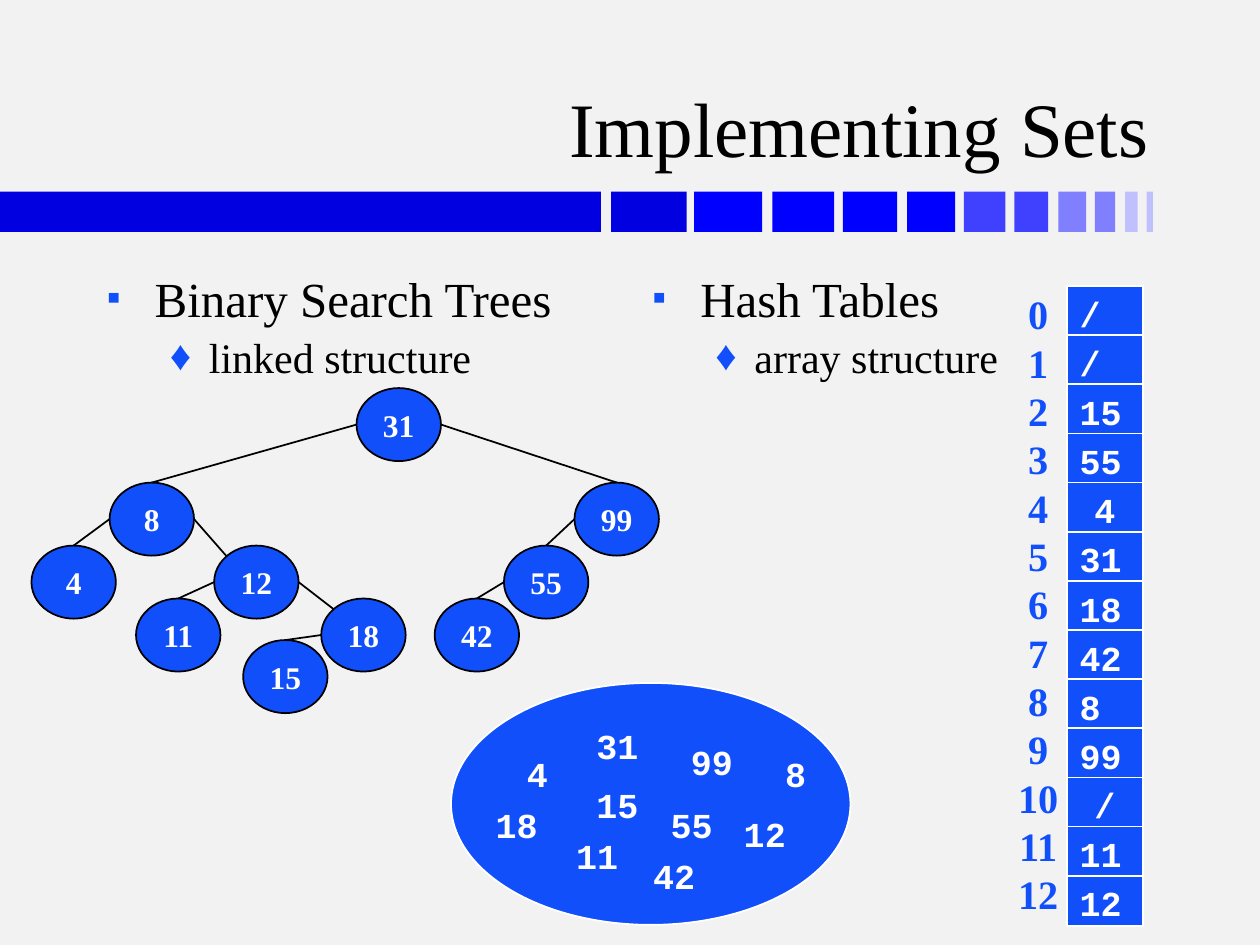
from lxml.etree import SubElement
from pptx import Presentation
from pptx.dml.color import RGBColor
from pptx.enum.shapes import MSO_CONNECTOR, MSO_SHAPE
from pptx.enum.text import MSO_ANCHOR, MSO_AUTO_SIZE, PP_ALIGN
from pptx.oxml.ns import qn
from pptx.util import Inches, Pt

BACKGROUND = RGBColor(0xF2, 0xF2, 0xF2)
BLACK = RGBColor(0, 0, 0)
WHITE = RGBColor(0xFF, 0xFF, 0xFF)
BLUE = RGBColor(0x11, 0x4F, 0xFB)
NAVY = RGBColor(0, 0, 0xE0)
PURE_BLUE = RGBColor(0, 0, 0xFF)
MID_BLUE = RGBColor(0x40, 0x40, 0xFF)
SOFT_BLUE = RGBColor(0x80, 0x80, 0xFF)
PALE_BLUE = RGBColor(0xC0, 0xC0, 0xFF)

HEADING = {"name": "Times New Roman", "size": Pt(44)}
TOPIC = {"name": "Times New Roman", "size": Pt(28)}
DETAIL = {"name": "Times New Roman", "size": Pt(24)}
NODE = {"name": "Times New Roman", "size": Pt(18), "bold": True}
INDEX = {"name": "Times New Roman", "size": Pt(23), "bold": True}
VALUE = {"name": "Courier New", "size": Pt(20), "bold": True}


def write(paragraph, text, formats, color, align):
    paragraph.text = text
    paragraph.alignment = align
    for name, value in formats.items():
        setattr(paragraph.font, name, value)
    paragraph.font.color.rgb = color


def draw(kind, left, top, width, height, fill, outline=None):
    shape = slide.shapes.add_shape(
        kind, Inches(left), Inches(top), Inches(width), Inches(height))
    shape.shadow.inherit = False
    shape.fill.solid()
    shape.fill.fore_color.rgb = fill
    if outline is None:
        shape.line.fill.background()
    else:
        shape.line.color.rgb = outline
        shape.line.width = Pt(1)
    return shape


prs = Presentation()
prs.slide_width, prs.slide_height = Inches(10), Inches(7.5)
slide = prs.slides.add_slide(prs.slide_layouts[6])
slide.background.fill.solid()
slide.background.fill.fore_color.rgb = BACKGROUND

# Fading band under the title
band = [
    (0, 4.77, NAVY), (4.85, 0.6, NAVY),
    (5.51, 0.54, PURE_BLUE), (6.13, 0.49, PURE_BLUE),
    (6.69, 0.43, PURE_BLUE), (7.2, 0.38, PURE_BLUE),
    (7.65, 0.33, MID_BLUE), (8.05, 0.27, MID_BLUE),
    (8.4, 0.22, SOFT_BLUE), (8.69, 0.16, SOFT_BLUE),
    (8.93, 0.1, PALE_BLUE), (9.1, 0.05, PALE_BLUE),
]
for left, width, color in band:
    draw(MSO_SHAPE.RECTANGLE, left, 1.52, width, 0.32, color)

# Title
title = slide.shapes.add_textbox(
    Inches(0.74), Inches(0.19), Inches(8.48), Inches(1.23)).text_frame
title.word_wrap = True
title.vertical_anchor = MSO_ANCHOR.BOTTOM
write(title.paragraphs[0], "Implementing Sets", HEADING, BLACK, PP_ALIGN.RIGHT)

# Two bulleted columns
for left, topic, detail in [
    (0.75, "Binary Search Trees", "linked structure"),
    (5.08, "Hash Tables", "array structure"),
]:
    column = slide.shapes.add_textbox(
        Inches(left), Inches(2.08), Inches(4.17), Inches(4.58)).text_frame
    column.word_wrap = True
    column.add_paragraph().space_before = Pt(2.5)
    rows = [
        (topic, TOPIC, "▪", 80, 0.38, 0.38, 0),
        (detail, DETAIL, "♦", 100, 0.81, 0.31, 1),
    ]
    for paragraph, row in zip(column.paragraphs, rows):
        text, formats, mark, percent, margin, hang, level = row
        paragraph.level = level
        properties = paragraph._p.get_or_add_pPr()
        properties.set("marL", str(Inches(margin)))
        properties.set("indent", str(-Inches(hang)))
        bullet_color = SubElement(properties, qn("a:buClr"))
        SubElement(bullet_color, qn("a:srgbClr"), val=str(BLUE))
        SubElement(properties, qn("a:buSzPct"), val=str(percent * 1000))
        SubElement(properties, qn("a:buFont"), typeface="Times New Roman")
        SubElement(properties, qn("a:buChar"), char=mark)
        write(paragraph, text, formats, BLACK, PP_ALIGN.LEFT)

# The set and its members
draw(MSO_SHAPE.OVAL, 3.58, 5.42, 3.17, 1.92, BLUE, WHITE)
members = [
    (31, 4.63, 5.7), (4, 4.08, 5.92), (11, 4.47, 6.57), (15, 4.63, 6.17),
    (55, 5.22, 6.33), (99, 5.38, 5.83), (12, 5.8, 6.4), (8, 6.13, 5.92),
    (42, 5.08, 6.73), (18, 3.83, 6.33),
]
for number, left, top in members:
    member = slide.shapes.add_textbox(
        Inches(left), Inches(top), Inches(0.54 if number > 9 else 0.37),
        Inches(0.43)).text_frame
    member.word_wrap = False
    member.auto_size = MSO_AUTO_SIZE.SHAPE_TO_FIT_TEXT
    write(member.paragraphs[0], str(number), VALUE, WHITE, PP_ALIGN.CENTER)

# Tree nodes
NODE_W, NODE_H = 0.67, 0.58
nodes = {
    99: (4.56, 3.83), 31: (2.83, 3.08), 8: (0.87, 3.83), 4: (0.25, 4.33),
    15: (1.93, 5.08), 55: (4, 4.33), 12: (1.7, 4.33), 18: (2.55, 4.75),
    11: (1.08, 4.75), 42: (3.45, 4.75),
}
for number, (left, top) in nodes.items():
    node = draw(MSO_SHAPE.OVAL, left, top, NODE_W, NODE_H, BLUE, BLACK).text_frame
    node.word_wrap = False
    node.vertical_anchor = MSO_ANCHOR.MIDDLE
    write(node.paragraphs[0], str(number), NODE, WHITE, PP_ALIGN.CENTER)

# Tree edges: side of the parent to the top or upper left of the child
SIDES = {"left": (0, 0.5), "right": (1, 0.5), "top": (0.5, 0), "upper left": (0.15, 0.15)}
edges = [
    (31, "left", 8, "top"), (31, "right", 99, "top"),
    (8, "left", 4, "top"), (8, "right", 12, "upper left"),
    (12, "left", 11, "top"), (12, "right", 18, "upper left"),
    (18, "left", 15, "top"), (99, "left", 55, "top"), (55, "left", 42, "top"),
]
for parent, start, child, end in edges:
    points = []
    for number, side in [(parent, start), (child, end)]:
        (left, top), (across, down) = nodes[number], SIDES[side]
        points += [Inches(left + across * NODE_W), Inches(top + down * NODE_H)]
    edge = slide.shapes.add_connector(MSO_CONNECTOR.STRAIGHT, *points)
    edge.line.color.rgb = BLACK
    edge.line.width = Pt(1)
    SubElement(edge._element.spPr, qn("a:effectLst"))

# Hash table slots: two are centred, the rest start at the left
slots = ["/", "/", "15", "55", "4", "31", "18", "42", "8", "99", "/", "11", "12"]
CENTRED = (4, 10)
for index, value in enumerate(slots):
    slot = draw(MSO_SHAPE.RECTANGLE, 8.47, 2.27 + 0.39 * index, 0.6, 0.4,
                BLUE, WHITE).text_frame
    slot.word_wrap = True
    slot.auto_size = MSO_AUTO_SIZE.SHAPE_TO_FIT_TEXT
    slot.vertical_anchor = MSO_ANCHOR.TOP
    write(slot.paragraphs[0], value, VALUE, WHITE,
          PP_ALIGN.CENTER if index in CENTRED else PP_ALIGN.LEFT)

# Slot numbers
numbers = slide.shapes.add_textbox(
    Inches(7.98), Inches(2.25), Inches(0.52), Inches(5.13)).text_frame
numbers.word_wrap = False
numbers.auto_size = MSO_AUTO_SIZE.SHAPE_TO_FIT_TEXT
for index in range(len(slots)):
    paragraph = numbers.add_paragraph() if index else numbers.paragraphs[0]
    paragraph.line_spacing = Pt(27.6)
    write(paragraph, str(index), INDEX, BLUE, PP_ALIGN.CENTER)

prs.save("out.pptx")
